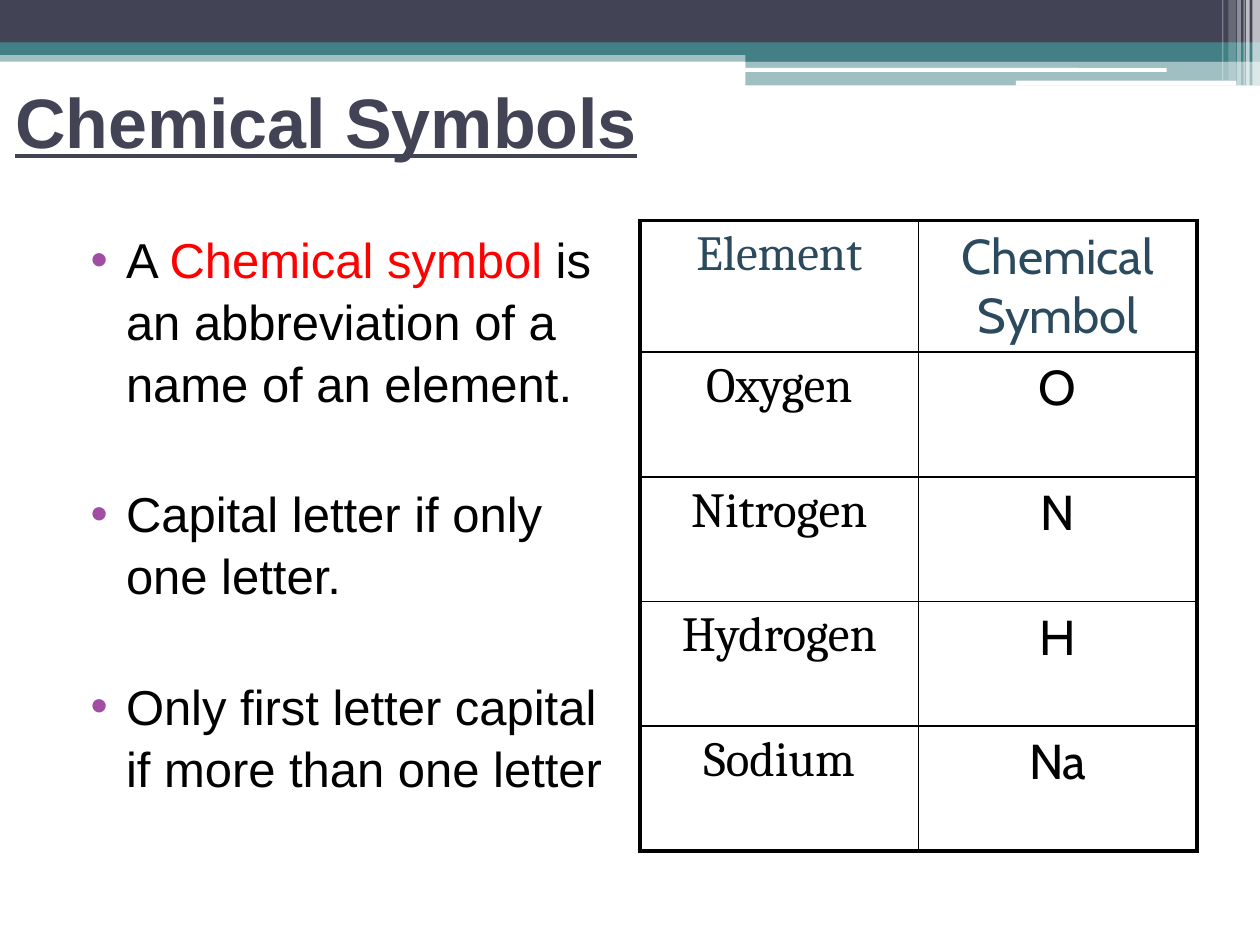
from typing import NamedTuple

from lxml import etree
from pptx import Presentation
from pptx import util as u
from pptx.dml.color import RGBColor
from pptx.enum import shapes, text
from pptx.oxml import ns

NAVY, TEAL, WHITE, BLACK = "424456", "438086", "FFFFFF", "000000"
RED, PURPLE, SLATE = "FF0000", "A04DA3", "2B4A5E"


class Band(NamedTuple):
    left: float
    top: float
    width: float
    height: float
    color: str
    opacity: int = 100
    rounded: bool = False


class Span(NamedTuple):
    words: str
    color: str = BLACK


BANDS = [
    Band(0, 28.8, 720, 6.48, TEAL, 50),
    Band(0, 0, 720, 24.48, NAVY),
    Band(0, 24.2, 720, 7.2, TEAL),
    Band(426, 28.08, 294, 7.2, TEAL),
    Band(426, 34.9, 294, 13.9, TEAL, 50),
    Band(425.5, 38.9, 241.2, 2.16, WHITE, rounded=True),
    Band(580.5, 46.1, 126, 2.88, WHITE, rounded=True),
    # Pale stripes at the right edge
    Band(715.7, 0, 4.3, 48.8, WHITE, 65),
    Band(712, 0, 2.16, 48.8, WHITE, 65),
    Band(710.6, 0, 0.72, 48.8, WHITE, 60),
    Band(707, 0, 2.16, 48.8, WHITE, 40),
    Band(702, 0, 4.3, 46, WHITE, 20),
    Band(698.4, 0, 0.72, 46, WHITE, 30),
]
BULLETS = [
    [Span("A "), Span("Chemical symbol", RED),
     Span(" is an abbreviation of a name of an element.")],
    [Span("Capital letter if only one letter.")],
    [Span("Only first letter capital if more than one letter")],
]
ELEMENTS = [("Element", "Chemical Symbol"), ("Oxygen", "O"), ("Nitrogen", "N"),
            ("Hydrogen", "H"), ("Sodium", "Na")]
COLUMN_FONTS = ("Cambria", "Cabin")


def rgb(color: str) -> RGBColor:
    return RGBColor.from_string(color)


def add_xml(parent, tag: str, **attributes: str):
    return etree.SubElement(parent, ns.qn(tag), attributes)


def place(box, left: float, top: float, width: float, height: float) -> None:
    box.left, box.top = u.Pt(left), u.Pt(top)
    box.width, box.height = u.Pt(width), u.Pt(height)


def add_span(para, words: str, font: str, size: float, color: str):
    span = para.add_run()
    span.text = words
    span.font.name, span.font.size = font, u.Pt(size)
    span.font.color.rgb = rgb(color)
    return span


def draw_band(page, band: Band) -> None:
    kind = (shapes.MSO_SHAPE.ROUNDED_RECTANGLE if band.rounded
            else shapes.MSO_SHAPE.RECTANGLE)
    box = page.shapes.add_shape(kind, *map(u.Pt, band[:4]))
    box.shadow.inherit = False
    box.line.fill.background()
    box.fill.solid()
    box.fill.fore_color.rgb = rgb(band.color)
    if band.opacity < 100:
        color = box._element.spPr.find(".//" + ns.qn("a:srgbClr"))
        add_xml(color, "a:alpha", val=str(band.opacity * 1000))


def write_title(box) -> None:
    place(box, 1.44, 23.76, 648, 90)
    box.text_frame.vertical_anchor = text.MSO_ANCHOR.MIDDLE
    para = box.text_frame.paragraphs[0]
    para.alignment = text.PP_ALIGN.LEFT
    span = add_span(para, "Chemical Symbols", "Arial", 40, NAVY)
    span.font.bold = span.font.underline = True


def write_bullets(box) -> None:
    place(box, 36, 126, 318.24, 356.4)
    frame = box.text_frame
    frame.auto_size = text.MSO_AUTO_SIZE.NONE
    for index, spans in enumerate(BULLETS):
        para = frame.add_paragraph() if index else frame.paragraphs[0]
        para.line_spacing = 1.05
        para.space_before = u.Pt(39.4 if index else 3)
        for span in spans:
            add_span(para, span.words, "Arial", 28, span.color)
        props = para._p.get_or_add_pPr()
        props.set("marL", str(u.Pt(28.8)))
        props.set("indent", str(u.Pt(-20.2)))
        add_xml(add_xml(props, "a:buClr"), "a:srgbClr", val=PURPLE)
        add_xml(props, "a:buFont", typeface="Arial")
        add_xml(props, "a:buChar", char="•")


def set_borders(cell, widths: dict[str, float]) -> None:
    props = cell._tc.get_or_add_tcPr()
    for index, (side, width) in enumerate(widths.items()):
        line = add_xml(props, "a:ln" + side, w=str(u.Pt(width)))
        add_xml(add_xml(line, "a:solidFill"), "a:srgbClr", val=BLACK)
        props.insert(index, line)


def draw_table(page) -> None:
    rows, columns = len(ELEMENTS), len(COLUMN_FONTS)
    frame = page.shapes.add_table(rows, columns, u.Pt(365.76), u.Pt(126),
                                  u.Pt(318.24), u.Pt(360))
    table = frame.table
    table.first_row = table.horz_banding = False
    for row, names in enumerate(ELEMENTS):
        table.rows[row].height = u.Pt(71.28 if row else 74.5)
        for column, name in enumerate(names):
            cell = table.cell(row, column)
            cell.fill.background()
            para = cell.text_frame.paragraphs[0]
            para.alignment = text.PP_ALIGN.CENTER
            add_span(para, name, COLUMN_FONTS[column], 28,
                     BLACK if row else SLATE)
            # Heavy outer frame, thin inner rules
            outer = {"L": column == 0, "R": column == columns - 1,
                     "T": row == 0, "B": row == rows - 1}
            set_borders(cell, {side: 2.25 if edge else 1
                               for side, edge in outer.items()})


def main() -> None:
    deck = Presentation()
    deck.slide_width, deck.slide_height = u.Pt(720), u.Pt(540)
    page = deck.slides.add_slide(deck.slide_layouts[1])
    title, body = page.shapes.title, page.placeholders[1]

    # Header decoration, kept behind the text
    for band in BANDS:
        draw_band(page, band)
    for box in (title, body):
        page.shapes._spTree.append(box._element)

    # Content
    write_title(title)
    write_bullets(body)
    draw_table(page)
    deck.save("out.pptx")


if __name__ == "__main__":
    main()
